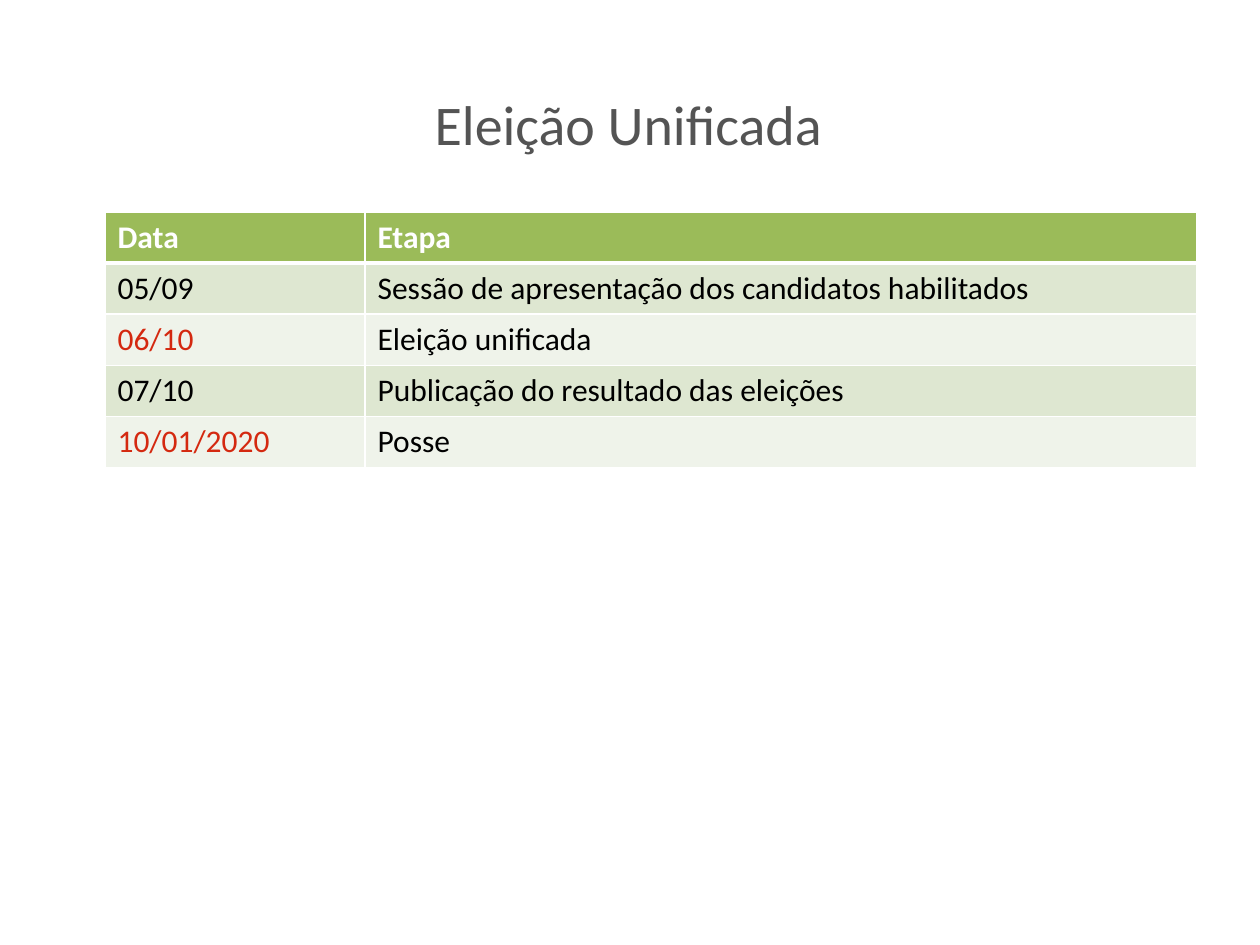
from lxml import etree
from pptx import Presentation, util as u
from pptx.dml.color import RGBColor
from pptx.enum import text
from pptx.oxml import ns

SCALE = 914400 / 126
WHITE = RGBColor(0xFF, 0xFF, 0xFF)
BLACK = RGBColor(0x00, 0x00, 0x00)
GREY = RGBColor(0x54, 0x54, 0x54)
RED = RGBColor(0xD4, 0x29, 0x10)
GREEN = RGBColor(0x9B, 0xBB, 0x59)
BANDS = (RGBColor(0xDE, 0xE7, 0xD1), RGBColor(0xEF, 0xF3, 0xEA))

HEADER = ("Data", "Etapa")
STAGES = (
    ("05/09", "Sessão de apresentação dos candidatos habilitados", BLACK),
    ("06/10", "Eleição unificada", RED),
    ("07/10", "Publicação do resultado das eleições", BLACK),
    ("10/01/2020", "Posse", RED),
)
COLUMN_WIDTHS = (260, 832)
ROW_HEIGHT = 51


def px(length):
    """Turn pixels into EMU."""
    return u.Emu(round(length * SCALE))


def format_font(font, color, **values):
    """Set the font colour and the given font attributes."""
    font.color.rgb = color
    for name, value in {"name": "Calibri", **values}.items():
        setattr(font, name, value)


def add_title(page, wording):
    """Place and format the title placeholder."""
    title = page.shapes.title
    place = {"left": 105, "top": 67, "width": 1047, "height": 113}
    for name, value in place.items():
        setattr(title, name, px(value))
    frame = title.text_frame
    frame.text = wording
    frame.vertical_anchor = text.MSO_ANCHOR.MIDDLE
    para = frame.paragraphs[0]
    para.alignment = text.PP_ALIGN.CENTER
    format_font(para.runs[0].font, GREY, size=u.Pt(32))


def set_borders(cell, widths):
    """Draw white cell borders with a width in points for each side."""
    properties = cell._tc.get_or_add_tcPr()
    for side, width in widths.items():
        line = etree.SubElement(properties, ns.qn(f"a:ln{side}"), w=str(u.Pt(width)))
        fill = etree.SubElement(line, ns.qn("a:solidFill"))
        etree.SubElement(fill, ns.qn("a:srgbClr"), val=str(WHITE))


def fill_cell(cell, wording, color, background, bold=False, top=1, bottom=1):
    """Write one table cell with its borders and background."""
    set_borders(cell, {"L": 1, "R": 1, "T": top, "B": bottom})
    cell.fill.solid()
    cell.fill.fore_color.rgb = background
    cell.text = wording
    span = cell.text_frame.paragraphs[0].runs[0]
    format_font(span.font, color, size=u.Pt(18), bold=bold)


def add_schedule(page):
    """Add the table of election dates and stages."""
    count = len(STAGES) + 1
    table = page.shapes.add_table(
        count, len(HEADER), px(105), px(212),
        px(sum(COLUMN_WIDTHS)), px(count * ROW_HEIGHT)).table
    for column, width in zip(table.columns, COLUMN_WIDTHS):
        column.width = px(width)
    for row in table.rows:
        row.height = px(ROW_HEIGHT)
    for index, wording in enumerate(HEADER):
        fill_cell(table.cell(0, index), wording, WHITE, GREEN, bold=True, bottom=3)
    for index, (date, stage, date_color) in enumerate(STAGES):
        band = BANDS[index % 2]
        top = 3 if index == 0 else 1
        fill_cell(table.cell(index + 1, 0), date, date_color, band, top=top)
        fill_cell(table.cell(index + 1, 1), stage, BLACK, band, top=top)


def main():
    """Build the slide and save the deck."""
    deck = Presentation()
    deck.slide_width, deck.slide_height = px(1260), px(945)
    page = deck.slides.add_slide(deck.slide_layouts[5])
    add_title(page, "Eleição Unificada")
    add_schedule(page)
    deck.save("out.pptx")


if __name__ == "__main__":
    main()
